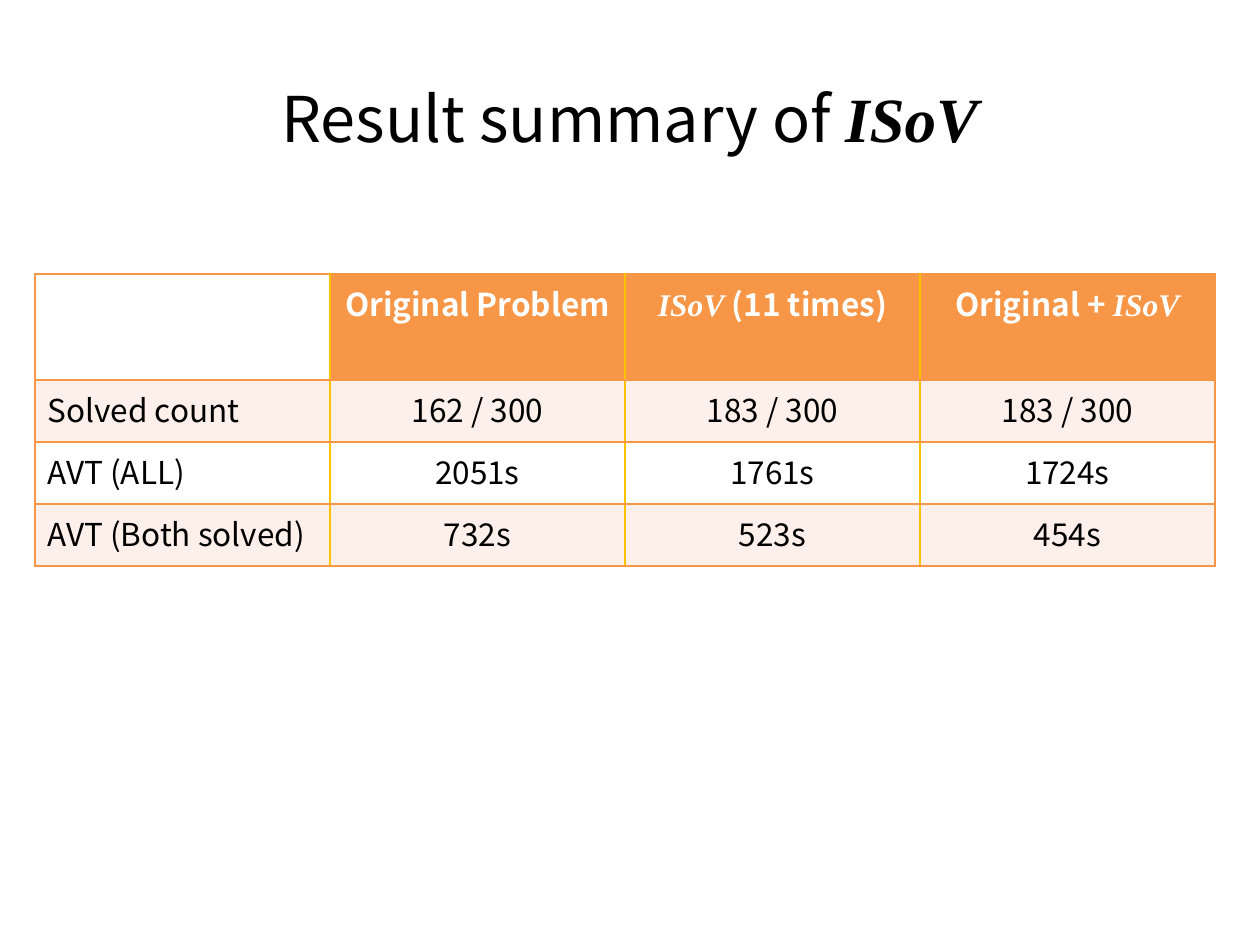
from lxml import etree
from pptx import Presentation
from pptx.dml.color import RGBColor
from pptx.enum.text import MSO_ANCHOR as Anchor, PP_ALIGN as Align
from pptx.oxml.ns import qn
from pptx.util import Emu, Pt

PX = 914400 // 126
SANS, SERIF = "Noto Sans CJK KR", "Times New Roman"
ORANGE, GOLD, BLUSH, WHITE, BLACK = "F79646", "FFC000", "FDEFE9", "FFFFFF", "000000"
TERM = "ISoV"

HEADERS = ["", "Original Problem", "ISoV (11 times)", "Original + ISoV"]
RESULTS = [
    ["Solved count", "162 / 300", "183 / 300", "183 / 300"],
    ["AVT (ALL)", "2051s", "1761s", "1724s"],
    ["AVT (Both solved)", "732s", "523s", "454s"],
]


def px(length):
    return Emu(length * PX)


def color(value):
    return RGBColor.from_string(value)


def split_term(text):
    """Split text into (piece, is_term) pairs; the term keeps a following space."""
    if TERM not in text:
        return [(text, False)] if text else []
    before, after = text.split(TERM)
    gap = " " if after.startswith(" ") else ""
    pieces = [(before, False), (TERM + gap, True), (after[len(gap):], False)]
    return [piece for piece in pieces if piece[0]]


class SlideBuilder:
    def __init__(self, deck):
        self.page = deck.slides.add_slide(deck.slide_layouts[6])

    def add_text(self, para, text, size, ink, bold=False, align=Align.CENTER):
        """Fill a paragraph, setting the term in italic serif."""
        para.alignment = align
        for piece, is_term in split_term(text):
            span = para.add_run()
            span.text = piece
            font = span.font
            font.name = SERIF if is_term else SANS
            font.size = Pt(size)
            font.bold = bold or is_term
            font.italic = is_term
            font.color.rgb = color(ink)

    def title(self, text, left, top, width, height):
        box = self.page.shapes.add_textbox(px(left), px(top), px(width), px(height))
        frame = box.text_frame
        frame.word_wrap = True
        frame.vertical_anchor = Anchor.MIDDLE
        self.add_text(frame.paragraphs[0], text, 36, BLACK)

    def border(self, cell, sides):
        """Draw 1 pt cell borders; sides are colours for left, right, top, bottom."""
        props = cell._tc.get_or_add_tcPr()
        for index, (side, value) in enumerate(zip("LRTB", sides)):
            line = etree.Element(qn(f"a:ln{side}"), w=str(Pt(1)))
            fill = etree.SubElement(line, qn("a:solidFill"))
            etree.SubElement(fill, qn("a:srgbClr"), val=value)
            props.insert(index, line)

    def table(self, rows, left, top, col_width, row_heights):
        last = len(rows[0]) - 1
        frame = self.page.shapes.add_table(
            len(rows), last + 1, px(left), px(top),
            px(col_width * (last + 1)), px(sum(row_heights)))
        grid = frame.table
        for column in grid.columns:
            column.width = px(col_width)
        for r, (texts, height) in enumerate(zip(rows, row_heights)):
            grid.rows[r].height = px(height)
            for c, text in enumerate(texts):
                cell = grid.cell(r, c)
                header = r == 0
                if header:
                    shade = ORANGE if c else WHITE
                else:
                    shade = BLUSH if r % 2 else WHITE
                cell.fill.solid()
                cell.fill.fore_color.rgb = color(shade)
                self.border(cell, [GOLD if c else ORANGE,
                                   GOLD if c < last else ORANGE, ORANGE, ORANGE])
                self.add_text(cell.text_frame.paragraphs[0], text, 18,
                              WHITE if header else BLACK, bold=header,
                              align=Align.CENTER if c else Align.LEFT)


def main():
    deck = Presentation()
    deck.slide_width, deck.slide_height = px(1260), px(945)
    slide = SlideBuilder(deck)
    slide.title("Result summary of ISoV", 63, 38, 1134, 158)
    slide.table([HEADERS] + RESULTS, 35, 274, 295, [106, 62, 62, 62])
    deck.save("out.pptx")


if __name__ == "__main__":
    main()
